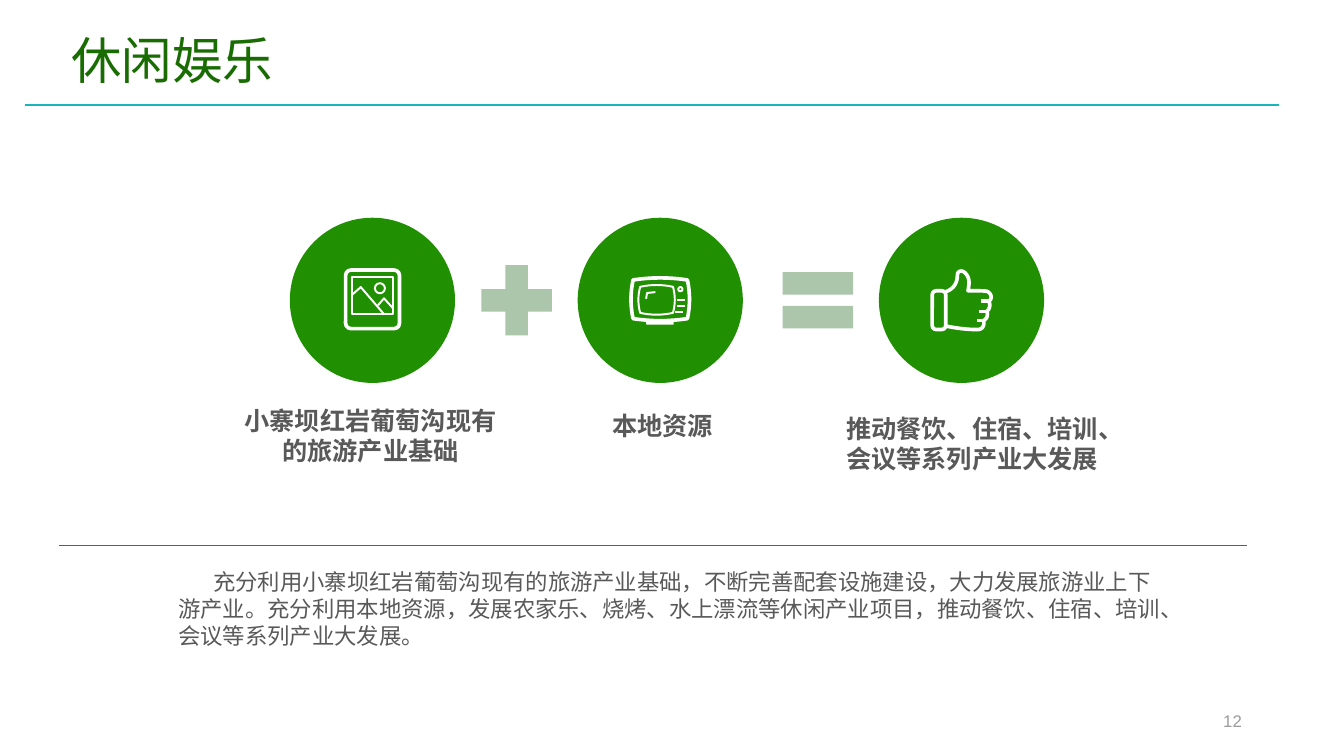
import pptx
import pptx.dml.color
import pptx.enum.shapes
import pptx.enum.text
import pptx.oxml.ns
import pptx.util
from lxml import etree

Pt = pptx.util.Pt
SHAPE = pptx.enum.shapes.MSO_SHAPE
ALIGN = pptx.enum.text.PP_ALIGN
ANCHOR = pptx.enum.text.MSO_ANCHOR

COLORS = {
    "title": "186C01", "rule": "19B5BD", "green": "209002", "sign": "ACC6AB",
    "icon": "FFFFFF", "text": "595959", "number": "9B9B9B",
}
DISC = 118
SIGN = 68.4
THICK, THIN = 2.6, 1.4
HAND = [
    [(-5, -8.3), (-2.9, -13), (-2.9, -18)],
    [(-2.9, -20.2), (-1.4, -20.9), (0, -20.9)],
    [(2.2, -20.9), (5.4, -17.3), (5.4, -13)],
    [(5.4, -10.8), (5, -8.6), (4.7, -6.8)],
    [(11.5, -6.8), (16.6, -6.8), (18, -6.5)],
    [(22, -5), (22, -0.5), (19.4, 0.7)],
    [(21, 2.9), (20.2, 6.5), (18, 7.9)],
    [(19.4, 10), (18, 13.7), (15.8, 14.4)],
    [(16.6, 18), (15.1, 20.9), (11.5, 20.9)],
    [(4, 20.9), (-3, 20), (-11.2, 18.4)],
]


def rgb(name):
    return pptx.dml.color.RGBColor.from_string(COLORS[name])


def style(sp, fill=None, line=None, width=THICK):
    sp.shadow.inherit = False
    if fill:
        sp.fill.solid()
        sp.fill.fore_color.rgb = rgb(fill)
    else:
        sp.fill.background()
    if line:
        sp.line.color.rgb = rgb(line)
        sp.line.width = Pt(width)
    else:
        sp.line.fill.background()


def add_preset(s, kind, x, y, w, h, **look):
    sp = s.shapes.add_shape(kind, Pt(x), Pt(y), Pt(w), Pt(h))
    style(sp, **look)
    return sp


def add_line(s, x1, y1, x2, y2, color, width):
    cn = s.shapes.add_connector(
        pptx.enum.shapes.MSO_CONNECTOR.STRAIGHT, Pt(x1), Pt(y1), Pt(x2), Pt(y2))
    cn.line.color.rgb = rgb(color)
    cn.line.width = Pt(width)
    etree.SubElement(cn._element.spPr, pptx.oxml.ns.qn("a:effectLst"))


def add_outline(s, cx, cy, points, width, close=False):
    pts = [(Pt(cx + x), Pt(cy + y)) for x, y in points]
    fb = s.shapes.build_freeform(*pts[0])
    fb.add_line_segments(pts[1:], close=close)
    style(fb.convert_to_shape(), line="icon", width=width)


def trace(start, curves, steps=8):
    points = [start]
    for b, c, d in curves:
        a = points[-1]
        for i in range(1, steps + 1):
            t = i / steps
            u = 1 - t
            points.append(tuple(
                u**3 * a[k] + 3 * u * u * t * b[k] + 3 * u * t * t * c[k] + t**3 * d[k]
                for k in (0, 1)))
    return points


def barrel(x, y, rx, ry, bulge):
    w, h, out = rx - bulge, ry - bulge, bulge * 4 / 3
    return trace((x - w, y - h), [
        [(x - w / 3, y - h - out), (x + w / 3, y - h - out), (x + w, y - h)],
        [(x + w + out, y - h / 3), (x + w + out, y + h / 3), (x + w, y + h)],
        [(x + w / 3, y + h + out), (x - w / 3, y + h + out), (x - w, y + h)],
        [(x - w - out, y + h / 3), (x - w - out, y - h / 3), (x - w, y - h)],
    ])


def add_text(s, x, y, w, h, text, size, color, bold=False,
             align=ALIGN.LEFT, anchor=ANCHOR.TOP, wrap=True):
    tf = s.shapes.add_textbox(Pt(x), Pt(y), Pt(w), Pt(h)).text_frame
    tf.word_wrap = wrap
    tf.vertical_anchor = anchor
    p = tf.paragraphs[0]
    p.text = text
    p.alignment = align
    r = p.runs[0]
    r.font.name = "Arial"
    r.font.size = Pt(size)
    r.font.bold = bold
    r.font.color.rgb = rgb(color)
    return p


def photo_icon(s, cx, cy):
    frame = add_preset(s, SHAPE.ROUNDED_RECTANGLE, cx - 19.1, cy - 21.6, 38.5, 41.8,
                       line="icon")
    frame.adjustments[0] = 0.1
    add_preset(s, SHAPE.RECTANGLE, cx - 14.8, cy - 16.6, 29.5, 26.6,
               line="icon", width=THIN)
    add_preset(s, SHAPE.OVAL, cx + 1.8, cy - 12.2, 7.2, 7.2, line="icon", width=THIN)
    add_outline(s, cx, cy, [(-14.8, -3.6), (-8.3, -9.4), (8.3, 10)], THIN)
    add_outline(s, cx, cy, [(4, 3.6), (8.3, -1.4), (14.8, 5.8)], THIN)


def tv_icon(s, cx, cy):
    add_outline(s, cx, cy, barrel(0, -0.7, 20.9, 15.3, 1.5), THICK, close=True)
    add_outline(s, cx, cy, barrel(-2.6, -0.3, 13, 10.6, 1.3), THIN, close=True)
    add_preset(s, SHAPE.ROUNDED_RECTANGLE, cx - 10, cy + 15, 19.6, 2.4, fill="icon")
    add_preset(s, SHAPE.OVAL, cx + 12.9, cy - 9.4, 3, 3, line="icon", width=THIN)
    for x, y in [(12.2, 0), (12.2, 4.3), (10.8, 8.6)]:
        add_line(s, cx + x, cy + y, cx + x + 5.8, cy + y, "icon", THIN)
    add_outline(s, cx, cy, [(-10.1, -1.1), (-9.4, -5.2), (-3.5, -5.8)], THIN)


def thumb_icon(s, cx, cy):
    cuff = add_preset(s, SHAPE.ROUNDED_RECTANGLE, cx - 20.9, cy - 6.8, 9.7, 27.7,
                      line="icon")
    cuff.adjustments[0] = 0.3
    add_outline(s, cx, cy, trace((-11.2, -6.1), HAND), THICK)
    for x, y in [(13.7, 0.7), (12.2, 7.9), (10.8, 14.4)]:
        add_line(s, cx + x, cy + y, cx + x + 5, cy + y, "icon", THICK)


def header(s, x, y, w, h):
    add_line(s, x, y + h, x + w, y + h, "rule", 1)
    p = add_text(s, x + 26, y, w - 26, h - 6.5, "休闲娱乐", 36, "title",
                 anchor=ANCHOR.BOTTOM)
    p.line_spacing = 0.9


def equation(s, x, y):
    discs = [(0, photo_icon), (205.6, tv_icon), (420.8, thumb_icon)]
    signs = [(127.8, SHAPE.MATH_PLUS), (343, SHAPE.MATH_EQUAL)]
    labels = [
        (-45, 130.3, 205.2, 51, "小寨坝红岩葡萄沟现有的旅游产业基础", True),
        (222.8, 133.9, 87.1, 29, "本地资源", False),
        (384.8, 136.1, 205.2, 51, "推动餐饮、住宿、培训、会议等系列产业大发展", True),
    ]
    for dx, icon in discs:
        add_preset(s, SHAPE.OVAL, x + dx, y, DISC, DISC, fill="green")
        icon(s, x + dx + DISC / 2, y + DISC / 2)
    for dx, kind in signs:
        add_preset(s, kind, x + dx, y + (DISC - SIGN) / 2, SIGN, SIGN, fill="sign")
    for dx, dy, w, h, text, wrap in labels:
        add_text(s, x + dx, y + dy, w, h, text, 18, "text", bold=True,
                 align=ALIGN.CENTER, wrap=wrap)


def summary(s, x, y, w):
    add_line(s, x, y, x + w, y, "green", 0.5)
    p = add_text(
        s, x + 77.8, y + 13, 720, 65.5,
        "充分利用小寨坝红岩葡萄沟现有的旅游产业基础，不断完善配套设施建设，"
        "大力发展旅游业上下游产业。充分利用本地资源，发展农家乐、烧烤、水上漂流等休闲产业项目，"
        "推动餐饮、住宿、培训、会议等系列产业大发展。", 16, "text")
    p._p.get_or_add_pPr().set("indent", str(Pt(25)))


def page_number(s, x, y, w, h):
    add_text(s, x, y, w, h, "12", 12, "number", align=ALIGN.RIGHT, anchor=ANCHOR.MIDDLE)


def main():
    prs = pptx.Presentation()
    prs.slide_width, prs.slide_height = Pt(960), Pt(540)
    s = prs.slides.add_slide(prs.slide_layouts[6])
    header(s, 18, 13, 895.7, 61.9)
    equation(s, 207, 155.5)
    summary(s, 42.5, 389.5, 848.2)
    page_number(s, 678.2, 500.4, 216, 28.8)
    prs.save("out.pptx")


if __name__ == "__main__":
    main()
